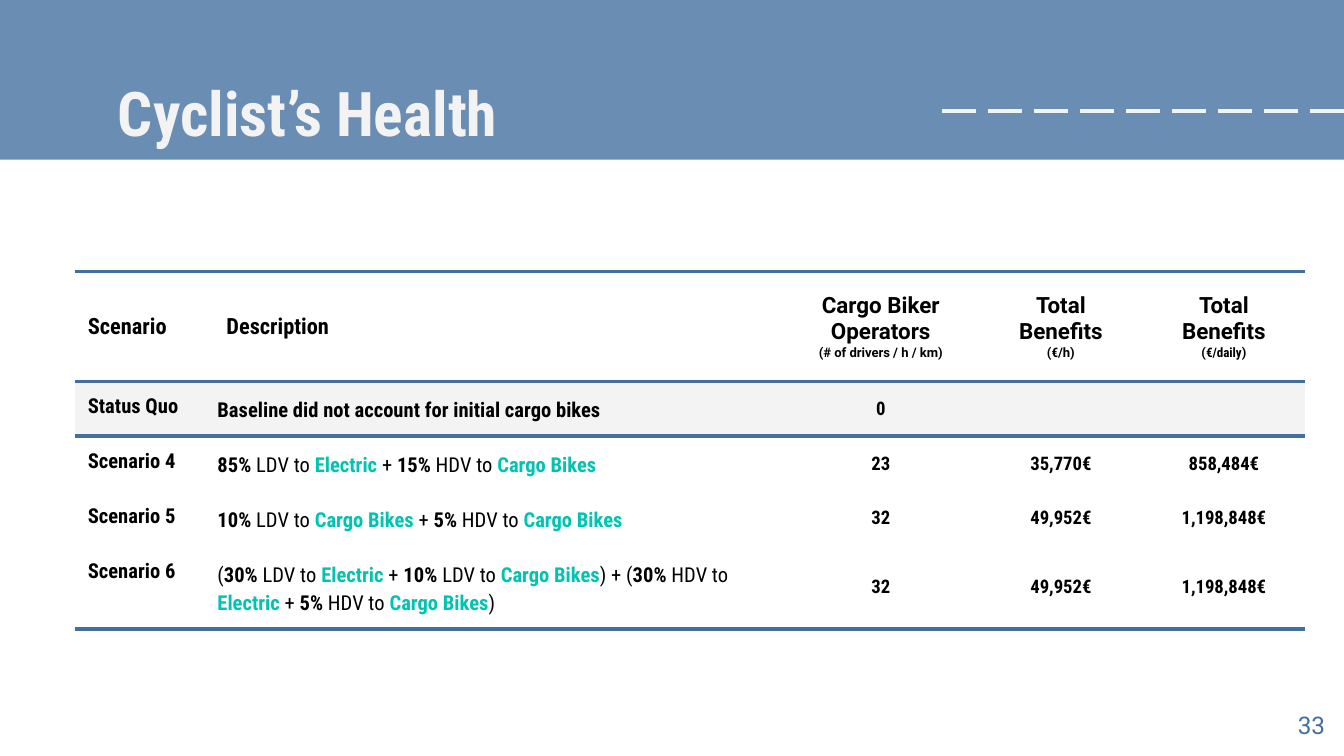
from lxml.etree import SubElement
from pptx import Presentation
from pptx.dml.color import RGBColor
from pptx.enum.dml import MSO_LINE
from pptx.enum.shapes import MSO_CONNECTOR, MSO_SHAPE
from pptx.enum.text import MSO_ANCHOR, PP_ALIGN
from pptx.oxml.ns import qn
from pptx.util import Cm, Pt

BAND = RGBColor(0x6A, 0x8D, 0xB4)
BLUE = RGBColor(0x43, 0x6F, 0x9E)
TEAL = RGBColor(0x00, 0xC3, 0xB1)
PALE = RGBColor(0xF3, 0xF3, 0xF3)
WHITE = RGBColor(0xFF, 0xFF, 0xFF)
BLACK = RGBColor(0, 0, 0)
WIDE, NARROW = "Roboto", "Roboto Condensed"
NO_STYLE = "{2D5ABB26-0587-4C30-8999-92F81FD0307C}"

TITLE = "Cyclist’s Health"
PAGE = "33"
# Each heading is a list of lines; a line is (size, [(text, font), ...])
HEADINGS = [
    [(12, [("Scenario", NARROW)])],
    [(12, [("Description", NARROW)])],
    [(12, [("Cargo Biker Operators", WIDE)]),
     (7, [("(# of drivers / h / km)", WIDE)])],
    [(12, [("Total", WIDE)]), (12, [("Benefits", WIDE)]),
     (7, [("(", WIDE), ("€", NARROW), ("/h)", WIDE)])],
    [(12, [("Total Benefits", WIDE)]),
     (7, [("(", WIDE), ("€/daily", NARROW), (")", WIDE)])],
]
# Asterisks enclose bold text
SCENARIOS = [
    ("Status Quo", "*Baseline did not account for initial cargo bikes*",
     "0", "", ""),
    ("Scenario 4", "*85%* LDV to *Electric* + *15%* HDV to *Cargo Bikes*",
     "23", "35,770€", "858,484€"),
    ("Scenario 5", "*10%* LDV to *Cargo Bikes* + *5%* HDV to *Cargo Bikes*",
     "32", "49,952€", "1,198,848€"),
    ("Scenario 6",
     "(*30%* LDV to *Electric* + *10% *LDV to *Cargo Bikes*) + "
     "(*30%* HDV to *Electric* + *5%* HDV to *Cargo Bikes*)",
     "32", "49,952€", "1,198,848€"),
]
VEHICLES = ("Electric", "Cargo Bikes")
COL_WIDTHS = [2.62, 10.75, 3.73, 3.08, 3.08]
ROW_HEIGHTS = [2.08, 1.03, 1.03, 1.03, 1.55]


def set_font(font, size, name, color, bold=False):
    font.size, font.name, font.bold = Pt(size), name, bold
    font.color.rgb = color


def set_insets(box, x, y):
    box.margin_left = box.margin_right = Cm(x)
    box.margin_top = box.margin_bottom = Cm(y)


def add_rules(cell, sides):
    """Draw blue borders on the given sides ("T", "B") of a cell."""
    tcPr = cell._tc.get_or_add_tcPr()
    for side in sides:
        ln = SubElement(tcPr, qn(f"a:ln{side}"), w=str(Pt(2.25)))
        fill = SubElement(ln, qn("a:solidFill"))
        SubElement(fill, qn("a:srgbClr"), val=str(BLUE))


def fill_heading(cell, lines):
    for i, (size, runs) in enumerate(lines):
        p = cell.text_frame.paragraphs[0] if i == 0 else cell.text_frame.add_paragraph()
        if len(lines) > 1:
            p.alignment = PP_ALIGN.CENTER
        for text, name in runs:
            r = p.add_run()
            r.text = text
            set_font(r.font, size, name, BLACK, True)


def fill_description(cell, marked):
    p = cell.text_frame.paragraphs[0]
    p.line_spacing = 1.15
    for i, part in enumerate(marked.split("*")):
        if part:
            r = p.add_run()
            r.text = part
            color = TEAL if part in VEHICLES else BLACK
            set_font(r.font, 11, NARROW, color, i % 2 == 1)


prs = Presentation()
prs.slide_width, prs.slide_height = Cm(25.4), Cm(14.29)
s = prs.slides.add_slide(prs.slide_layouts[5])

# Title band
band = s.shapes.add_shape(MSO_SHAPE.RECTANGLE, Cm(-0.05), 0, Cm(25.5), Cm(3.02))
band.shadow.inherit = False
band.fill.solid()
band.fill.fore_color.rgb = BAND
band.line.fill.background()

dashes = s.shapes.add_connector(MSO_CONNECTOR.STRAIGHT, Cm(17.81), Cm(2.1), Cm(25.4), Cm(2.1))
dashes.line.color.rgb = PALE
dashes.line.width = Pt(2.25)
dashes.line.dash_style = MSO_LINE.LONG_DASH
SubElement(dashes._element.spPr, qn("a:effectLst"))

title = s.shapes.title
s.shapes._spTree.append(title._element)  # in front of the band
title.left, title.top, title.width, title.height = Cm(1.98), Cm(1.17), Cm(21.44), Cm(1.6)
number = s.shapes.add_textbox(Cm(23.77), Cm(13.18), Cm(1.52), Cm(1.09))
for sp, text, align, style in (
    (title, TITLE, PP_ALIGN.LEFT, (33, NARROW, PALE, True)),
    (number, PAGE, PP_ALIGN.RIGHT, (13, WIDE, BLUE)),
):
    tf = sp.text_frame
    tf.text = text
    tf.word_wrap = True
    tf.vertical_anchor = MSO_ANCHOR.TOP
    set_insets(tf, 0.25, 0.25)
    tf.paragraphs[0].alignment = align
    set_font(tf.paragraphs[0].font, *style)

# Scenario table
frame = s.shapes.add_table(len(ROW_HEIGHTS), len(COL_WIDTHS), Cm(1.41), Cm(5.13),
                           Cm(sum(COL_WIDTHS)), Cm(sum(ROW_HEIGHTS)))
table = frame.table
table._tbl.tblPr.find(qn("a:tableStyleId")).text = NO_STYLE
table.first_row = table.horz_banding = False
for column, width in zip(table.columns, COL_WIDTHS):
    column.width = Cm(width)
for row, height in zip(table.rows, ROW_HEIGHTS):
    row.height = Cm(height)

rules = {0: "TB", 1: "T", len(SCENARIOS): "B"}
for i, values in enumerate([HEADINGS, *SCENARIOS]):
    for j, value in enumerate(values):
        cell = table.cell(i, j)
        add_rules(cell, rules.get(i, ""))
        cell.fill.solid()
        cell.fill.fore_color.rgb = PALE if i == 1 else WHITE
        cell.vertical_anchor = MSO_ANCHOR.MIDDLE
        if i == 0:
            set_insets(cell, 0.25, 0.25)
            fill_heading(cell, value)
        elif j == 1:
            set_insets(cell, 0.08, 0.25)
            fill_description(cell, value)
        else:
            name_column = j == 0
            set_insets(cell, *((0.25, 0.25) if name_column else (0.08, 0.05)))
            cell.text = value
            p = cell.text_frame.paragraphs[0]
            set_font(p.font, 11 if name_column else 10, NARROW, BLACK, True)
            if name_column:
                cell.vertical_anchor = MSO_ANCHOR.TOP
            else:
                p.alignment = PP_ALIGN.CENTER

prs.save("out.pptx")
